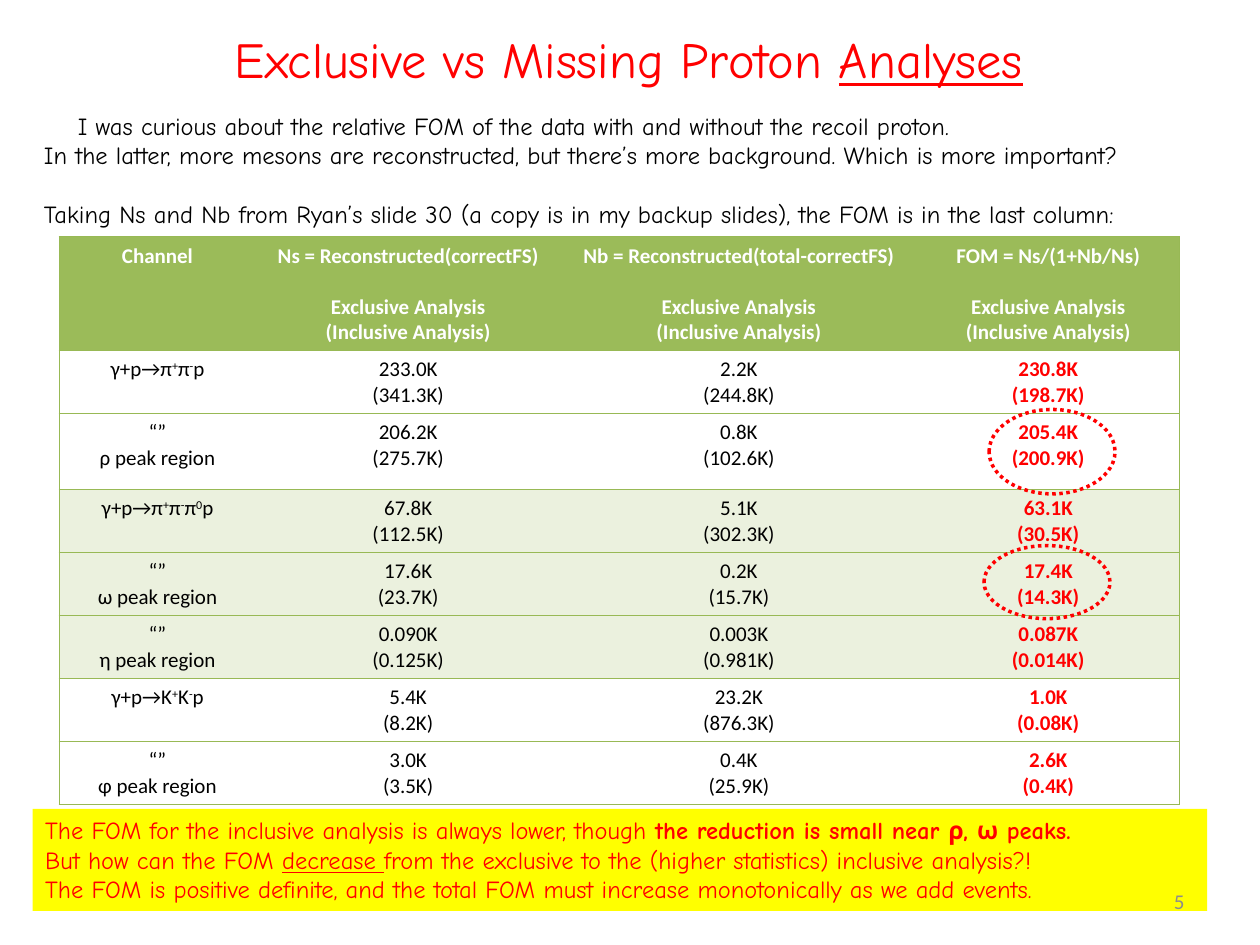
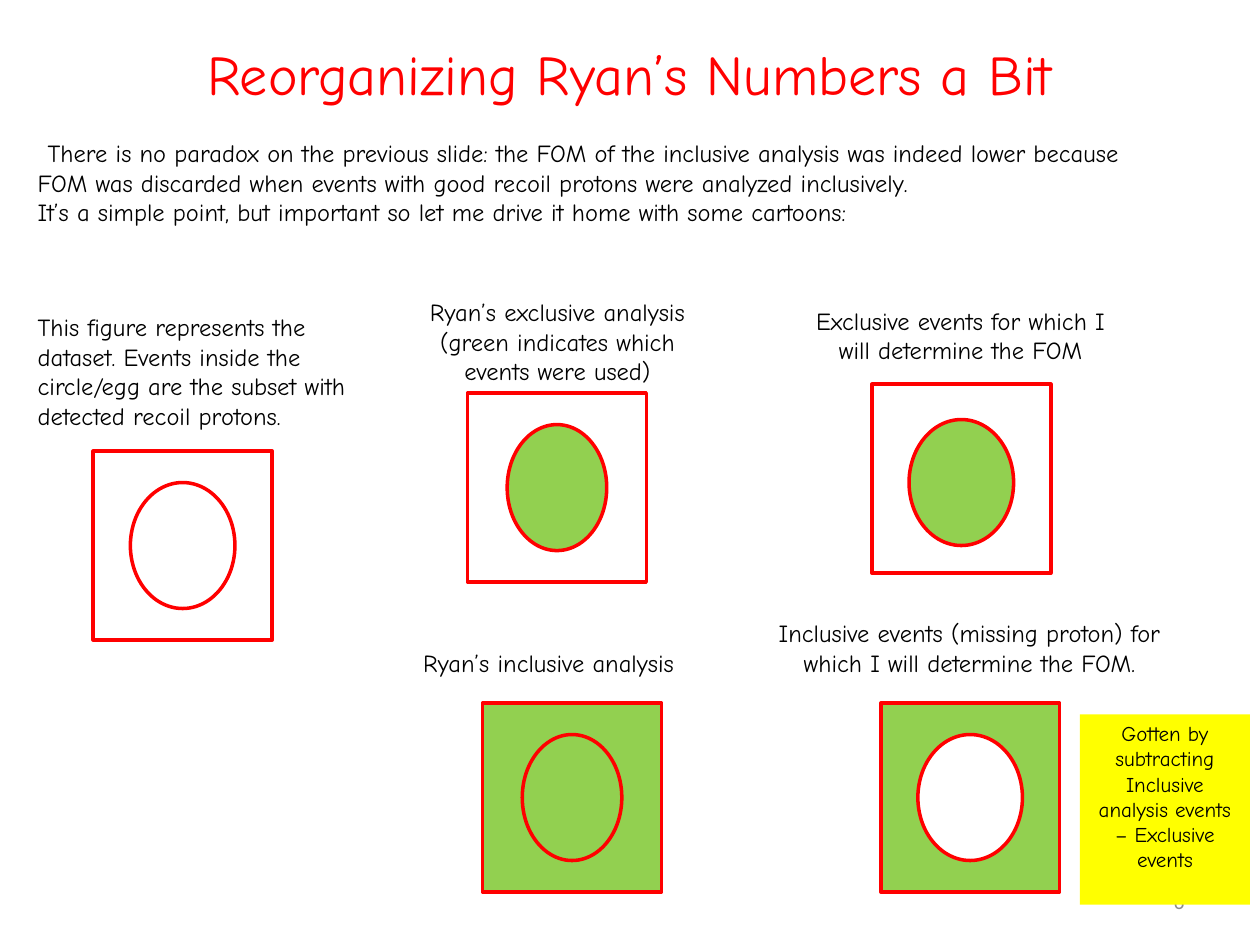
from lxml import etree
from pptx import Presentation
from pptx import util as u
from pptx.dml.color import RGBColor
from pptx.enum import dml, shapes, text
from pptx.oxml.ns import qn

RED, BLACK, WHITE, GREY = "FF0000", "000000", "FFFFFF", "8C8C8C"
YELLOW, GREEN, PALE = "FFFF00", "92D050", "EBF1DE"
HEADER, BORDER = "9BBB59", "98B955"
HAND, PLAIN = "Comic Neue", "Calibri"
NO_GRID = "{2D5ABB26-0587-4C30-8999-92F81FD0307C}"
MARKS = {"*": "bold", "_": "underline", "^": "sup"}
CENTER, RIGHT = text.PP_ALIGN.CENTER, text.PP_ALIGN.RIGHT
RECT, OVAL = shapes.MSO_SHAPE.RECTANGLE, shapes.MSO_SHAPE.OVAL

INTRO = [
    "I was curious about the relative FOM of the data with and without the recoil proton.",
    "In the latter, more mesons are reconstructed, but there’s more background. Which is more important?",
    "Taking Ns and Nb from Ryan’s slide 30 (a copy is in my backup slides), the FOM is in the last column:",
]
ANALYSES = ["Exclusive Analysis", "(Inclusive Analysis)"]
HEADINGS = [
    ["Channel"],
    ["Ns = Reconstructed(correctFS)"] + ANALYSES,
    ["Nb = Reconstructed(total-correctFS)"] + ANALYSES,
    ["FOM = Ns/(1+Nb/Ns)"] + ANALYSES,
]
CHANNELS = [
    (["γ+p→π^+^π^-^p"], ["233.0K", "(341.3K)"], ["2.2K", "(244.8K)"], ["230.8K", "(198.7K)"]),
    (["“”", "ρ peak region"], ["206.2K", "(275.7K)"], ["0.8K", "(102.6K)"], ["205.4K", "(200.9K)"]),
    (["γ+p→π^+^π^-^π^0^p"], ["67.8K", "(112.5K)"], ["5.1K", "(302.3K)"], ["63.1K", "(30.5K)"]),
    (["“”", "ω peak region"], ["17.6K", "(23.7K)"], ["0.2K", "(15.7K)"], ["17.4K", "(14.3K)"]),
    (["“”", "η peak region"], ["0.090K", "(0.125K)"], ["0.003K", "(0.981K)"], ["0.087K", "(0.014K)"]),
    (["γ+p→K^+^K^-^p"], ["5.4K", "(8.2K)"], ["23.2K", "(876.3K)"], ["1.0K", "(0.08K)"]),
    (["“”", "φ peak region"], ["3.0K", "(3.5K)"], ["0.4K", "(25.9K)"], ["2.6K", "(0.4K)"]),
]
SHADED = (3, 4, 5)
COL_WIDTHS = [1.56, 2.42, 2.83, 2.08]
ROW_HEIGHTS = [0.9, 0.5, 0.6, 0.5, 0.5, 0.5, 0.5, 0.5]
HIGHLIGHTS = [(7.85, 3.25, 1, 0.67), (7.81, 4.33, 1, 0.58)]
CONCLUSION = [
    "The FOM for the inclusive analysis is always lower, though *the reduction is small near ρ, ω peaks.*",
    "But how can the FOM _decrease _from the exclusive to the (higher statistics) inclusive analysis?!",
    "The FOM is positive definite, and the total FOM must increase monotonically as we add events.",
]
NO_PARADOX = [
    "There is no paradox on the previous slide: the FOM of the inclusive analysis was indeed lower because "
    "FOM was discarded when events with good recoil protons were analyzed inclusively.",
    "It’s a simple point, but important so let me drive it home with some cartoons:",
]
BOX_W, BOX_H, EGG_H = 1.42, 1.5, 1
CARTOONS = [
    dict(box=(0.74, 3.58), egg=(0.83, 0.25), fills=(None, None), label=(0.2, 2.43, 2.85, 1.04), align=None,
         lines=["This figure represents the dataset. Events inside the circle/egg are the subset "
                "with detected recoil protons."]),
    dict(box=(3.71, 3.12), egg=(0.79, 0.25), fills=(None, GREEN), label=(3.05, 2.31, 2.75, 0.81), align=CENTER,
         lines=["Ryan’s exclusive analysis", "(green indicates which", "events were used)"]),
    dict(box=(6.92, 3.05), egg=(0.83, 0.28), fills=(None, GREEN), label=(6.26, 2.38, 2.73, 0.57), align=CENTER,
         lines=["Exclusive events for which I will determine the FOM"]),
    dict(box=(3.83, 5.58), egg=(0.79, 0.25), fills=(GREEN, None), label=(3.19, 5.09, 2.33, 0.34), align=CENTER,
         lines=["Ryan’s inclusive analysis"]),
    dict(box=(6.99, 5.58), egg=(0.83, 0.25), fills=(GREEN, WHITE), label=(5.95, 4.86, 3.49, 0.57), align=CENTER,
         lines=["Inclusive events (missing proton) for which I will determine the FOM."]),
]
SUBTRACTION = ["Gotten by subtracting Inclusive analysis events – Exclusive events"]


def rgb(value):
    return RGBColor.from_string(value)


def inches(values):
    return [u.Inches(v) for v in values]


def add_runs(p, line, size, font, color, bold):
    state = dict(bold=bold, underline=False, sup=False)
    start = 0
    for i, ch in enumerate(line + "\0"):
        if ch not in MARKS and ch != "\0":
            continue
        if i > start:
            r = p.add_run()
            r.text = line[start:i]
            fmt = dict(name=font, size=u.Pt(size), bold=state["bold"], underline=state["underline"])
            for key, value in fmt.items():
                setattr(r.font, key, value)
            r.font.color.rgb = rgb(color)
            if state["sup"]:
                r._r.get_or_add_rPr().set("baseline", "30000")
        if ch in MARKS:
            state[MARKS[ch]] = not state[MARKS[ch]]
        start = i + 1


def write(tf, lines, size=14, font=HAND, color=BLACK, bold=False, align=None, indent=0, gap_after=None, gap=0):
    tf.word_wrap = True
    for i, line in enumerate(lines):
        p = tf.paragraphs[0] if i == 0 else tf.add_paragraph()
        p.alignment = align
        if i == 0 and indent:
            p._p.get_or_add_pPr().set("indent", str(u.Inches(indent)))
        if i == gap_after:
            p.space_after = u.Pt(gap)
        add_runs(p, line, size, font, color, bold)


def add_text(s, at, lines, anchor=text.MSO_ANCHOR.TOP, **style):
    tf = s.shapes.add_textbox(*inches(at)).text_frame
    tf.vertical_anchor = anchor
    write(tf, lines, **style)


def add_shape(s, kind, at, fill=None, line=None, dash=None):
    sp = s.shapes.add_shape(kind, *inches(at))
    sp.shadow.inherit = False
    if fill:
        sp.fill.solid()
        sp.fill.fore_color.rgb = rgb(fill)
    else:
        sp.fill.background()
    if line:
        sp.line.color.rgb = rgb(line)
        sp.line.width = u.Pt(2)
        if dash:
            sp.line.dash_style = dash
    else:
        sp.line.fill.background()
    return sp


def add_note(s, at, lines, **style):
    tf = add_shape(s, RECT, at, YELLOW).text_frame
    tf.vertical_anchor = text.MSO_ANCHOR.TOP
    write(tf, lines, **style)


def add_slide(prs, title, title_at, title_size, number):
    s = prs.slides.add_slide(prs.slide_layouts[6])
    middle = text.MSO_ANCHOR.MIDDLE
    add_text(s, title_at, [title], middle, size=title_size, color=RED, align=CENTER)
    return s, lambda: add_text(s, (7.17, 6.95, 2.33, 0.4), [str(number)], middle,
                               size=12, font=PLAIN, color=GREY, align=RIGHT)


def add_borders(cell, sides):
    tcPr = cell._tc.get_or_add_tcPr()
    for side in sides:
        ln = etree.SubElement(tcPr, qn("a:ln" + side), w=str(u.Pt(0.75)))
        fill = etree.SubElement(ln, qn("a:solidFill"))
        etree.SubElement(fill, qn("a:srgbClr"), val=BORDER)


def add_fom_table(s):
    rows = [HEADINGS] + CHANNELS
    size = (sum(COL_WIDTHS), sum(ROW_HEIGHTS))
    table = s.shapes.add_table(len(rows), len(COL_WIDTHS), *inches((0.47, 1.88) + size)).table
    table._tbl.tblPr.find(qn("a:tableStyleId")).text = NO_GRID
    for col, width in zip(table.columns, COL_WIDTHS):
        col.width = u.Inches(width)
    last = len(COL_WIDTHS) - 1
    for i, row in enumerate(rows):
        table.rows[i].height = u.Inches(ROW_HEIGHTS[i])
        for j, lines in enumerate(row):
            cell = table.cell(i, j)
            add_borders(cell, ("L" if j == 0 else "") + ("R" if j == last else "") + "TB")
            fill = HEADER if i == 0 else PALE if i in SHADED else None
            if fill:
                cell.fill.solid()
                cell.fill.fore_color.rgb = rgb(fill)
            else:
                cell.fill.background()
            color = WHITE if i == 0 else RED if j == last else BLACK
            write(cell.text_frame, lines, size=12, font=PLAIN, color=color, bold=i == 0 or j == last,
                  align=CENTER, gap_after=0 if i == 0 and j else None, gap=14.6)


def build_comparison(prs):
    s, add_number = add_slide(prs, "Exclusive vs Missing Proton _Analyses_", (0.49, 0.17, 9, 0.58), 28.8, 5)
    add_text(s, (0.25, 0.83, 9.58, 1.04), INTRO, indent=0.27, gap_after=1, gap=16.7)
    add_fom_table(s)
    add_note(s, (0.26, 6.42, 9.32, 0.81), CONCLUSION, color=RED)
    add_number()
    for at in HIGHLIGHTS:
        add_shape(s, OVAL, at, line=RED, dash=dml.MSO_LINE.ROUND_DOT)


def build_cartoons(prs):
    s, add_number = add_slide(prs, "Reorganizing Ryan’s Numbers a Bit", (0.5, 0.17, 9, 0.82), 32, 6)
    add_text(s, (0.2, 1.05, 9.15, 0.83), NO_PARADOX, indent=0.08)
    for c in CARTOONS:
        left, top = c["box"]
        egg_w, drop = c["egg"]
        box_fill, egg_fill = c["fills"]
        add_shape(s, RECT, (left, top, BOX_W, BOX_H), box_fill, RED)
        add_shape(s, OVAL, (left + (BOX_W - egg_w) / 2, top + drop, egg_w, EGG_H), egg_fill, RED)
        add_text(s, c["label"], c["lines"], align=c["align"])
    add_number()
    add_note(s, (8.57, 5.67, 1.35, 1.51), SUBTRACTION, size=12, align=CENTER)


def main():
    prs = Presentation()
    prs.slide_width, prs.slide_height = inches((10, 7.5))
    build_comparison(prs)
    build_cartoons(prs)
    prs.save("out.pptx")


if __name__ == "__main__":
    main()
